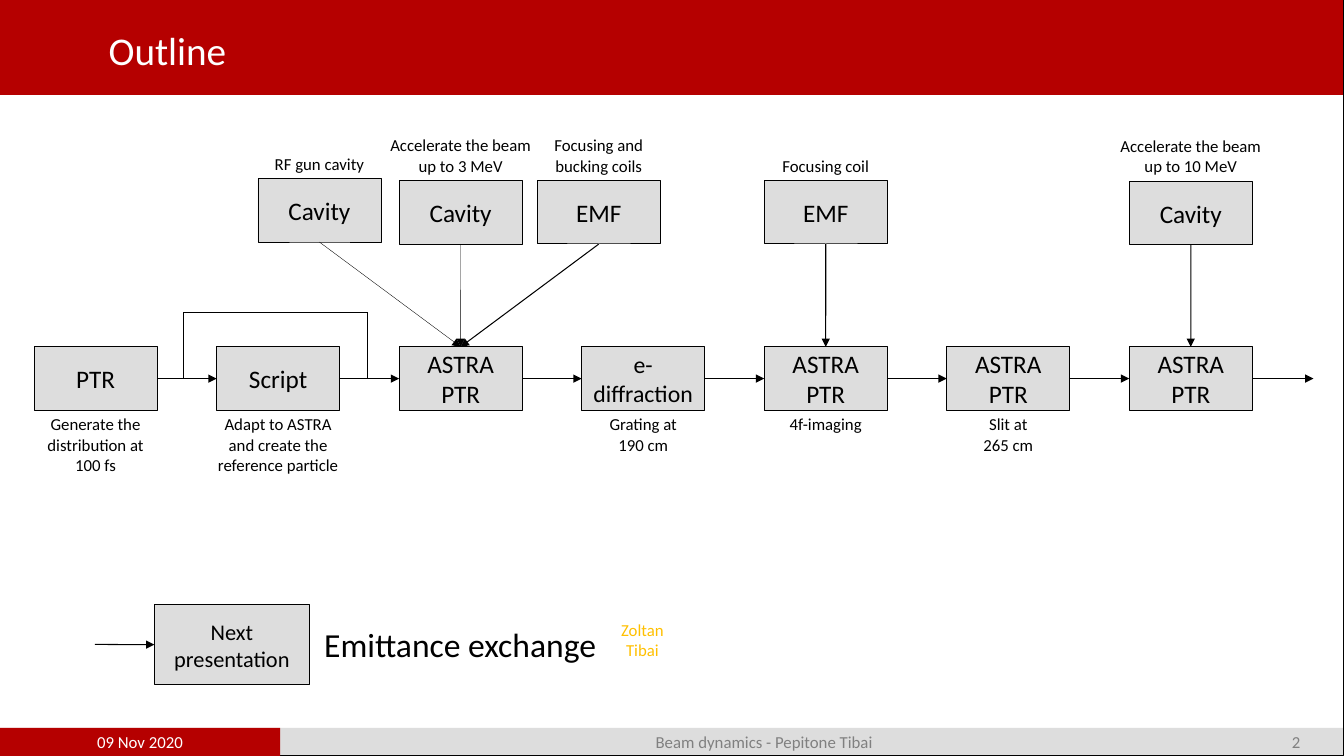
from dataclasses import dataclass
from itertools import pairwise

from lxml import etree
from pptx import Presentation
from pptx import util as u
from pptx.dml.color import RGBColor
from pptx.enum import shapes, text
from pptx.oxml.ns import qn


@dataclass(frozen=True)
class Theme:
    font: str = "Calibri"
    red: str = "B50000"
    grey: str = "DDDDDD"
    muted: str = "808080"
    black: str = "000000"
    white: str = "FFFFFF"
    gold: str = "FFC000"
    title: float = 28
    heading: float = 24
    label: float = 18
    tight: float = 17
    legend: float = 16
    small: float = 12
    line: float = 0.75
    hairline: float = 0.25


@dataclass(frozen=True)
class Stage:
    label: str
    caption: str = ""
    caption_width: float = 3.91
    size: float = 18


@dataclass(frozen=True)
class Source:
    """A field map feeding the chain stage with index `target`."""
    label: str
    left: float
    top: float
    target: int
    caption: str
    caption_lines: int
    caption_width: float
    line: float = 0.75


THEME = Theme()
WIDTH, HEIGHT = 33.87, 19.05
BOX_W, BOX_H = 3.1, 1.6
CHAIN_LEFT, CHAIN_TOP, PITCH = 0.86, 8.74, 4.6
AXIS = CHAIN_TOP + BOX_H / 2
FOOTER_TOP, FOOTER_H = 18.34, 0.71
DATE_W, NUMBER_W = 7.06, 2.41
TOP, LEFT, BOTTOM, RIGHT = range(4)

STAGES = [
    Stage("PTR", "Generate the distribution at\n100 fs"),
    Stage("Script", "Adapt to ASTRA and create the reference particle"),
    Stage("ASTRA\nPTR"),
    Stage("e- diffraction", "Grating at\n190 cm", size=THEME.tight),
    Stage("ASTRA\nPTR", "4f-imaging"),
    Stage("ASTRA\nPTR", "Slit at\n265 cm", BOX_W),
    Stage("ASTRA\nPTR"),
]
SOURCES = [
    Source("Cavity", 6.5, 4.5, 2, "RF gun cavity", 1, 4.06, THEME.hairline),
    Source("Cavity", 10.06, 4.55, 2, "Accelerate the beam up to 3 MeV", 2, 4.06,
           THEME.hairline),
    Source("EMF", 13.54, 4.55, 2, "Focusing and bucking coils", 2, BOX_W),
    Source("EMF", 19.26, 4.55, 4, "Focusing coil", 1, 3.91),
    Source("Cavity", 28.46, 4.57, 6, "Accelerate the beam up to 10 MeV", 2, 4.29),
]


def colour(code: str) -> RGBColor:
    return RGBColor.from_string(code)


def write(shape, words: str, *, size: float = THEME.small, ink: str = THEME.black,
          align=text.PP_ALIGN.CENTER, anchor=text.MSO_ANCHOR.MIDDLE,
          wrap: bool = True) -> None:
    frame = shape.text_frame
    frame.word_wrap = wrap
    frame.vertical_anchor = anchor
    for number, line in enumerate(words.split("\n")):
        para = frame.add_paragraph() if number else frame.paragraphs[0]
        para.alignment = align
        span = para.add_run()
        span.text = line
        span.font.name = THEME.font
        span.font.size = u.Pt(size)
        span.font.color.rgb = colour(ink)


def add_text(page, left: float, top: float, width: float, height: float,
             words: str, **style):
    box = page.shapes.add_textbox(u.Cm(left), u.Cm(top), u.Cm(width), u.Cm(height))
    write(box, words, **style)
    return box


def add_box(page, left: float, top: float, width: float, height: float,
            fill: str | None = THEME.grey, line: float | None = THEME.line):
    box = page.shapes.add_shape(shapes.MSO_SHAPE.RECTANGLE, u.Cm(left), u.Cm(top),
                                u.Cm(width), u.Cm(height))
    box.shadow.inherit = False
    if fill:
        box.fill.solid()
        box.fill.fore_color.rgb = colour(fill)
    else:
        box.fill.background()
    if line:
        box.line.color.rgb = colour(THEME.black)
        box.line.width = u.Pt(line)
    else:
        box.line.fill.background()
    return box


def add_line(page, start=(0, 0), end=(0, 0), *, from_box=None, from_side: int = RIGHT,
             to_box=None, to_side: int = LEFT, width: float = THEME.line,
             arrow: bool = True) -> None:
    """Draw a line between points; a given box takes the place of a point."""
    line = page.shapes.add_connector(shapes.MSO_CONNECTOR.STRAIGHT,
                                     *(u.Cm(value) for value in (*start, *end)))
    if from_box is not None:
        line.begin_connect(from_box, from_side)
    if to_box is not None:
        line.end_connect(to_box, to_side)
    line.line.color.rgb = colour(THEME.black)
    line.line.width = u.Pt(width)
    if arrow:
        etree.SubElement(line.line._get_or_add_ln(), qn("a:tailEnd"), type="triangle")
    etree.SubElement(line._element.spPr, qn("a:effectLst"))


def draw_frame(page) -> None:
    add_box(page, 0, FOOTER_TOP, WIDTH, FOOTER_H, line=None)
    add_box(page, 0, 0, WIDTH, 2.39, THEME.red, None)
    add_box(page, 0, 0, WIDTH, HEIGHT, None)
    date = add_box(page, 0, FOOTER_TOP, DATE_W, FOOTER_H, THEME.red, None)
    write(date, "09 Nov 2020", ink=THEME.white)
    number_left = WIDTH - NUMBER_W
    add_text(page, DATE_W, FOOTER_TOP, number_left - DATE_W, FOOTER_H,
             "Beam dynamics - Pepitone Tibai", ink=THEME.muted)
    add_text(page, number_left, FOOTER_TOP, NUMBER_W, FOOTER_H, "2", ink=THEME.muted)
    title = add_text(page, 2.49, 0, 27.1, 2.39, "Outline", size=THEME.title,
                     ink=THEME.white, align=text.PP_ALIGN.LEFT)
    title.text_frame.margin_bottom = 0


def draw_chain(page) -> list:
    boxes = []
    for index, stage in enumerate(STAGES):
        left = CHAIN_LEFT + index * PITCH
        box = add_box(page, left, CHAIN_TOP, BOX_W, BOX_H)
        write(box, stage.label, size=stage.size)
        boxes.append(box)
        if stage.caption:
            add_text(page, left + (BOX_W - stage.caption_width) / 2, CHAIN_TOP + BOX_H - 0.03,
                     stage.caption_width, 1.8, stage.caption, anchor=text.MSO_ANCHOR.TOP)
    for before, after in pairwise(boxes):
        add_line(page, from_box=before, to_box=after)
    add_line(page, end=(33.1, AXIS), from_box=boxes[-1])
    bypass = [(4.62, AXIS), (4.62, 7.87), (9.27, 7.87), (9.27, AXIS)]
    for start, end in pairwise(bypass):
        add_line(page, start, end, arrow=False)
    return boxes


def draw_sources(page, stages: list) -> None:
    for source in SOURCES:
        box = add_box(page, source.left, source.top, BOX_W, BOX_H, line=source.line)
        write(box, source.label, size=THEME.label)
        height = 0.25 + 0.51 * source.caption_lines
        add_text(page, source.left + (BOX_W - source.caption_width) / 2,
                 source.top - height, source.caption_width, height, source.caption)
        add_line(page, from_box=box, from_side=BOTTOM, to_box=stages[source.target],
                 to_side=TOP, width=source.line)


def draw_next_talk(page) -> None:
    box = add_box(page, 3.89, 15.24, 3.91, 2.01)
    write(box, "Next presentation", size=THEME.legend)
    add_line(page, (2.39, 16.24), to_box=box)
    add_text(page, 7.92, 15.6, 7.44, 1.27, "Emittance exchange", size=THEME.heading,
             align=text.PP_ALIGN.LEFT, anchor=text.MSO_ANCHOR.TOP, wrap=False)
    add_text(page, 15.39, 15.49, 1.6, 1.27, "Zoltan\nTibai", ink=THEME.gold,
             anchor=text.MSO_ANCHOR.TOP, wrap=False)


def main() -> None:
    deck = Presentation()
    deck.slide_width, deck.slide_height = u.Cm(WIDTH), u.Cm(HEIGHT)
    page = deck.slides.add_slide(deck.slide_layouts[6])
    draw_frame(page)
    draw_sources(page, draw_chain(page))
    draw_next_talk(page)
    deck.save("out.pptx")


if __name__ == "__main__":
    main()
